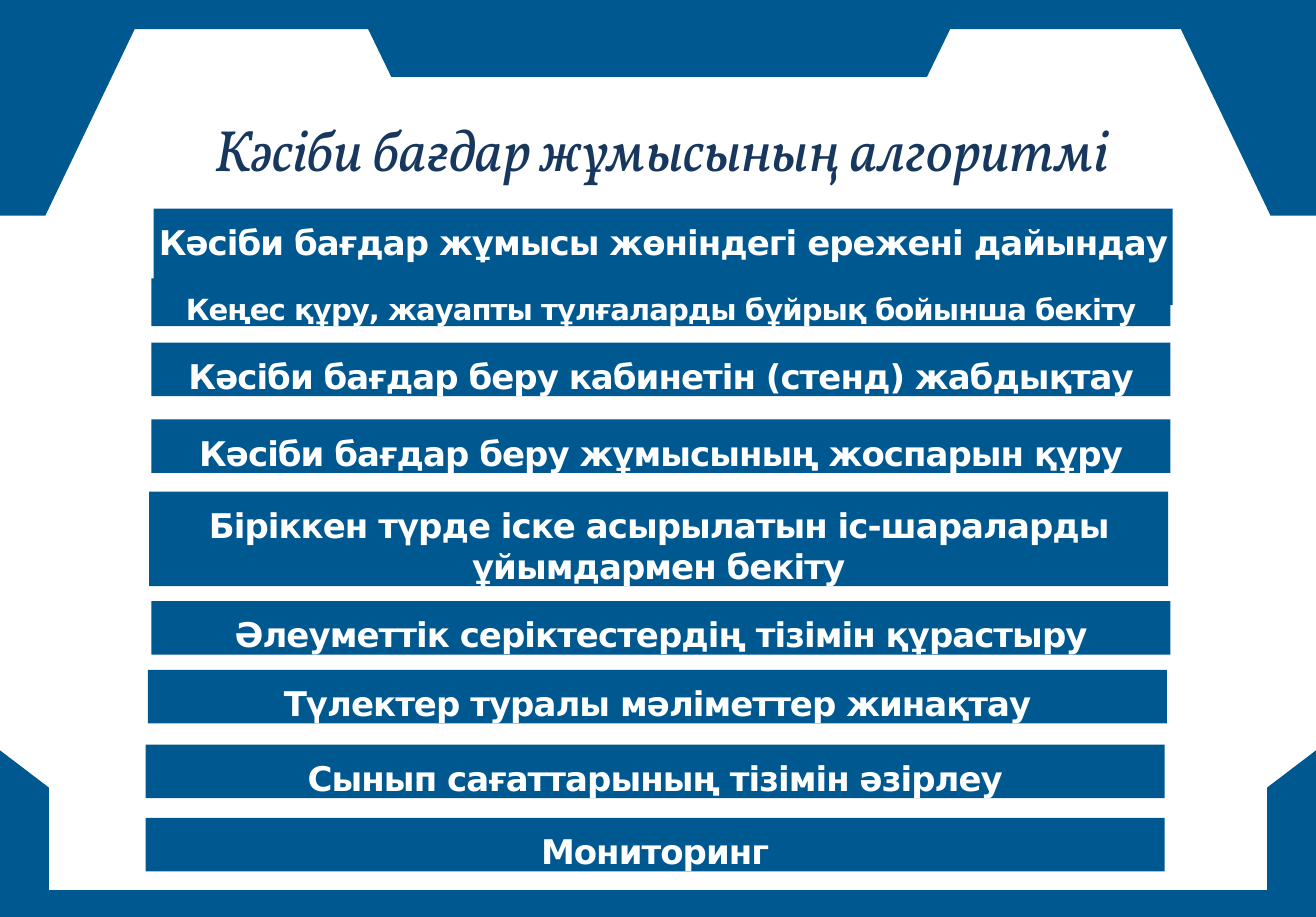
import pptx
import pptx.dml.color
import pptx.enum.shapes
import pptx.enum.text
import pptx.util

COLUMNS, ROWS = 113, 78.7
COLORS = {"frame": "005891", "heading": "17375E", "step": "FFFFFF"}

FRAME_BOTTOM = [(0, 76.4), (COLUMNS, 76.4), (COLUMNS, ROWS), (0, ROWS)]
FRAME_NOTCH = [(30.4, 0), (82.8, 0), (79.6, 6.6), (33.6, 6.6)]
UPPER_LEFT = [(0, 1.8), (11.9, 1.8), (3.9, 18.5), (0, 18.5)]
LOWER_LEFT = [(0, ROWS), (0, 64.4), (4.2, 67.6), (4.2, 77.7), (2.8, ROWS)]
TOP_AND_UPPER_RIGHT = [(0, 0), (0, 2.5), (101.4, 2.5), (109.1, 18.5),
                       (COLUMNS, 18.5), (COLUMNS, 0)]

STEP_WIDTH = 87.5
# left column, top row, height in rows, text size, wording
STEPS = [
    (13.2, 17.9, 8.3, 21, "Кәсіби бағдар жұмысы жөніндегі ережені дайындау"),
    (13, 23.9, 4.1, 18, "Кеңес құру, жауапты тұлғаларды бұйрық бойынша бекіту"),
    (13, 29.4, 4.6, 21, "Кәсіби бағдар беру кабинетін (стенд) жабдықтау"),
    (13, 36, 4.6, 21, "Кәсіби бағдар беру жұмысының жоспарын құру"),
    (12.8, 42.2, 8.1, 21,
     "Біріккен түрде іске асырылатын іс-шараларды ұйымдармен бекіту"),
    (13, 51.6, 4.6, 21, "Әлеуметтік серіктестердің тізімін құрастыру"),
    (12.7, 57.5, 4.6, 21, "Түлектер туралы мәліметтер жинақтау"),
    (12.5, 63.9, 4.6, 21, "Сынып сағаттарының тізімін әзірлеу"),
    (12.5, 70.2, 4.6, 21, "Мониторинг"),
]


def cells(count):
    """Length of a number of grid cells, each a tenth of an inch."""
    return pptx.util.Inches(count / 10)


def mirrored(points):
    return [(COLUMNS - column, row) for column, row in points]


class AlgorithmSlide:
    def __init__(self, presentation):
        self.slide = presentation.slides.add_slide(presentation.slide_layouts[6])
        self.shapes = self.slide.shapes

    def color(self, name):
        return pptx.dml.color.RGBColor.from_string(COLORS[name])

    def paint(self, shape):
        shape.shadow.inherit = False
        shape.fill.solid()
        shape.fill.fore_color.rgb = self.color("frame")
        shape.line.fill.background()

    def frame_part(self, points):
        corners = [(cells(column), cells(row)) for column, row in points]
        builder = self.shapes.build_freeform(*corners[0])
        builder.add_line_segments(corners[1:], close=True)
        self.paint(builder.convert_to_shape())

    def centred_text(self, frame, wording, font_name, size, color):
        frame.vertical_anchor = pptx.enum.text.MSO_ANCHOR.TOP
        paragraph = frame.paragraphs[0]
        paragraph.text = wording
        paragraph.alignment = pptx.enum.text.PP_ALIGN.CENTER
        paragraph.font.name = font_name
        paragraph.font.size = pptx.util.Pt(size)
        paragraph.font.color.rgb = self.color(color)
        return paragraph

    def heading(self, left, top, width, height, wording):
        box = self.shapes.add_textbox(*map(cells, (left, top, width, height)))
        box.text_frame.word_wrap = False
        paragraph = self.centred_text(
            box.text_frame, wording, "Vollkorn", 36, "heading")
        paragraph.font.italic = True

    def step(self, left, top, height, size, wording):
        bar = self.shapes.add_shape(
            pptx.enum.shapes.MSO_SHAPE.RECTANGLE,
            *map(cells, (left, top, STEP_WIDTH, height)))
        self.paint(bar)
        frame = bar.text_frame
        frame.word_wrap = True
        frame.margin_left = frame.margin_right = frame.margin_bottom = 0
        frame.margin_top = cells(1.1)
        paragraph = self.centred_text(frame, wording, "DejaVu Sans", size, "step")
        paragraph.font.bold = True
        # letter spacing in hundredths of a point
        paragraph.runs[0]._r.get_or_add_rPr().set("spc", "-60")


def main():
    presentation = pptx.Presentation()
    presentation.slide_width = cells(COLUMNS)
    presentation.slide_height = cells(ROWS)
    algorithm = AlgorithmSlide(presentation)
    for part in (FRAME_BOTTOM, FRAME_NOTCH, UPPER_LEFT, LOWER_LEFT,
                 mirrored(LOWER_LEFT), TOP_AND_UPPER_RIGHT):
        algorithm.frame_part(part)
    algorithm.heading(12.2, 9.2, 89.2, 7.1, "Кәсіби бағдар жұмысының алгоритмі")
    for step in STEPS:
        algorithm.step(*step)
    presentation.save("out.pptx")


if __name__ == "__main__":
    main()
